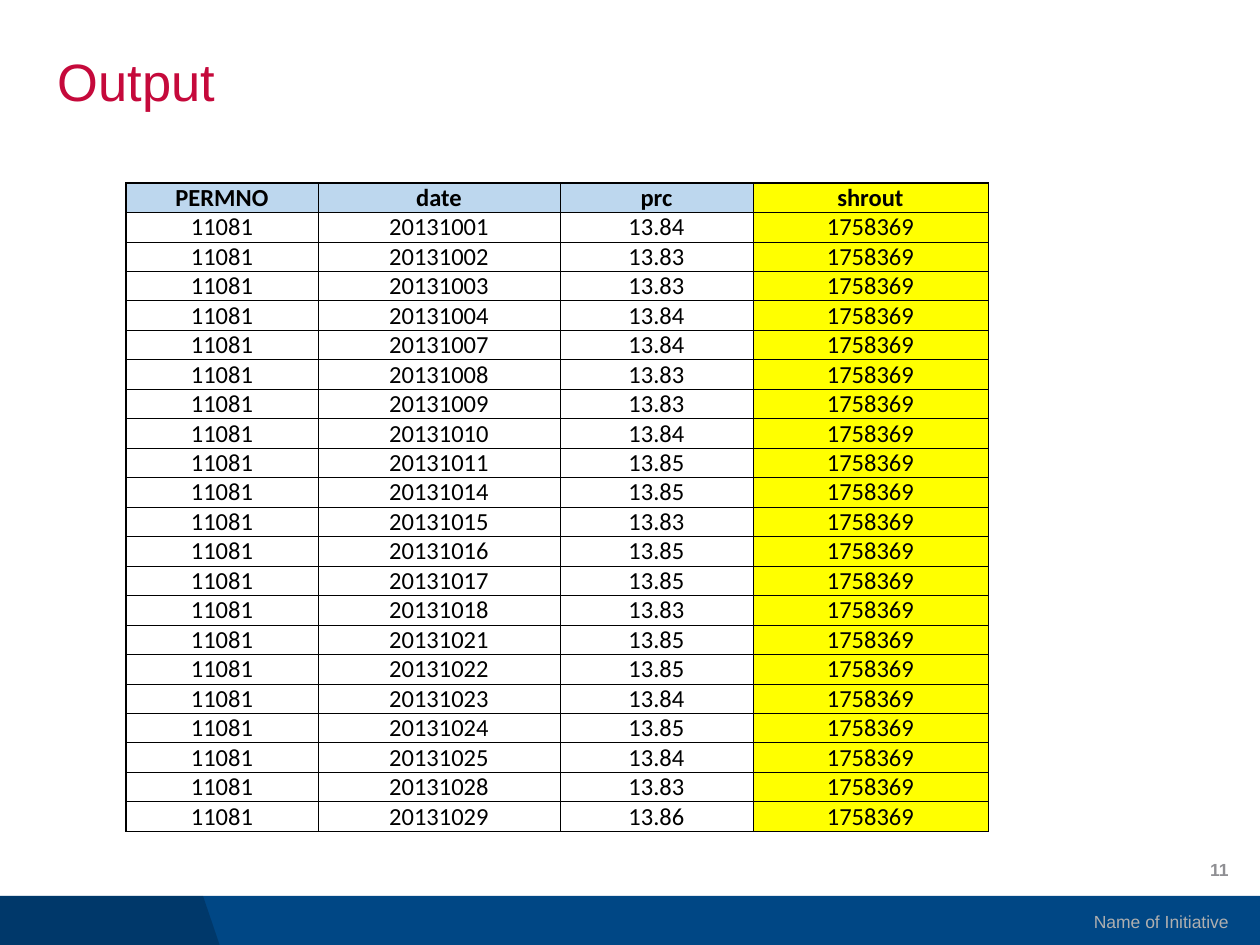
import pptx
import pptx.util
import pptx.dml.color
import pptx.enum.shapes
import pptx.enum.text
import pptx.oxml
import pptx.oxml.ns
import lxml.etree

RGBColor = pptx.dml.color.RGBColor
Align = pptx.enum.text.PP_ALIGN
Anchor = pptx.enum.text.MSO_ANCHOR

BLACK = RGBColor(0x00, 0x00, 0x00)
RED = RGBColor(0xC5, 0x09, 0x3B)
NAVY = RGBColor(0x00, 0x47, 0x85)
PALE_BLUE = RGBColor(0xBD, 0xD7, 0xEE)
YELLOW = RGBColor(0xFF, 0xFF, 0x00)
SILVER = RGBColor(0xAF, 0xAF, 0xAF)
GRAY = RGBColor(0x8F, 0x8F, 0x93)

HEADINGS = ("PERMNO", "date", "prc", "shrout")
PERMNO, SHROUT = "11081", "1758369"
DAYS = (1, 2, 3, 4, 7, 8, 9, 10, 11, 14, 15, 16, 17, 18, 21, 22, 23, 24, 25, 28, 29)
PRICES = ("13.84 13.83 13.83 13.84 13.84 13.83 13.83 13.84 13.85 13.85 13.83 "
          "13.85 13.85 13.83 13.85 13.85 13.84 13.85 13.84 13.83 13.86").split()
COLUMN_WIDTHS = (192, 242, 193, 235)
ROW_HEIGHT = 27


def px(length):
    return pptx.util.Emu(round(length * 914400 / 126))


def style(para, size, font, color, bold=False, align=Align.LEFT):
    para.alignment = align
    para.font.size = pptx.util.Pt(size)
    para.font.name = font
    para.font.bold = bold
    para.font.color.rgb = color


def paint(shape, color):
    shape.shadow.inherit = False
    shape.fill.solid()
    shape.fill.fore_color.rgb = color
    shape.line.fill.background()


def add_title(page, left, top, width, height):
    title = page.shapes.title
    title.left, title.top, title.width, title.height = map(px, (left, top, width, height))
    frame = title.text_frame
    frame.text = "Output"
    frame.margin_left = frame.margin_right = 0
    frame.vertical_anchor = Anchor.TOP
    frame.auto_size = pptx.enum.text.MSO_AUTO_SIZE.SHAPE_TO_FIT_TEXT
    para = frame.paragraphs[0]
    para.line_spacing = 0.9
    style(para, 30, "Arial", RED)


def add_label(page, text, left, top, width, height, color, bold=False):
    box = page.shapes.add_textbox(*map(px, (left, top, width, height)))
    frame = box.text_frame
    frame.word_wrap = True
    frame.vertical_anchor = Anchor.MIDDLE
    frame.text = text
    style(frame.paragraphs[0], 10, "Arial", color, bold, Align.RIGHT)


def add_footer(page, left, top, width, height):
    # Full-width band
    band = page.shapes.add_shape(pptx.enum.shapes.MSO_SHAPE.RECTANGLE,
                                 *map(px, (left, top, width, height)))
    paint(band, NAVY)

    # Slanted dark corner, 20 % black
    builder = page.shapes.build_freeform(px(left), px(top))
    corners = ((203, 0), (221, height), (0, height))
    builder.add_line_segments([(px(left + x), px(top + y)) for x, y in corners])
    corner = builder.convert_to_shape()
    paint(corner, BLACK)
    color = corner.fill._xPr.find(".//" + pptx.oxml.ns.qn("a:srgbClr"))
    lxml.etree.SubElement(color, pptx.oxml.ns.qn("a:alpha"), val="20000")

    # Labels share a right edge
    right = left + width - 19
    add_label(page, "Name of Initiative", right - 426, top + 1, 426, 50, SILVER)
    add_label(page, "11", right - 284, top - 51, 284, 50, GRAY, bold=True)


def set_borders(cell, widths):
    properties = cell._tc.get_or_add_tcPr()
    namespace = pptx.oxml.ns.nsdecls("a")
    for side, width in widths.items():
        properties.append(pptx.oxml.parse_xml(
            f'<a:ln{side} {namespace} w="{pptx.util.Pt(width)}"><a:solidFill>'
            f'<a:srgbClr val="{BLACK}"/></a:solidFill></a:ln{side}>'))


def add_output_table(page, left, top, height):
    rows = [HEADINGS] + [(PERMNO, f"201310{day:02}", price, SHROUT)
                         for day, price in zip(DAYS, PRICES)]
    last = len(rows) - 1
    holder = page.shapes.add_table(len(rows), len(HEADINGS), px(left), px(top),
                                   px(sum(COLUMN_WIDTHS)), px(height))
    table = holder.table
    table.first_row = table.horz_banding = False
    for column, width in zip(table.columns, COLUMN_WIDTHS):
        column.width = px(width)

    for r, values in enumerate(rows):
        table.rows[r].height = px(ROW_HEIGHT)
        for c, value in enumerate(values):
            cell = table.cell(r, c)
            cell.margin_left = cell.margin_right = cell.margin_top = cell.margin_bottom = 0
            # Thicker left, top and bottom edges around the table
            set_borders(cell, {"L": 1 if c == 0 else 0.5, "R": 0.5,
                               "T": 1 if r == 0 else 0.5,
                               "B": 1 if r == last else 0.5})
            if c == len(HEADINGS) - 1 or r == 0:
                cell.fill.solid()
                cell.fill.fore_color.rgb = YELLOW if c == len(HEADINGS) - 1 else PALE_BLUE
            else:
                cell.fill.background()
            cell.text = value
            style(cell.text_frame.paragraphs[0], 14, "Calibri", BLACK, r == 0, Align.CENTER)
    holder.height = px(height)


def main():
    deck = pptx.Presentation()
    deck.slide_width, deck.slide_height = px(1260), px(945)
    page = deck.slides.add_slide(deck.slide_layouts[5])
    add_footer(page, 0, 896, 1260, 53)
    add_title(page, 58, 50, 1086, 71)
    add_output_table(page, 126, 183, 646)
    deck.save("out.pptx")


if __name__ == "__main__":
    main()
